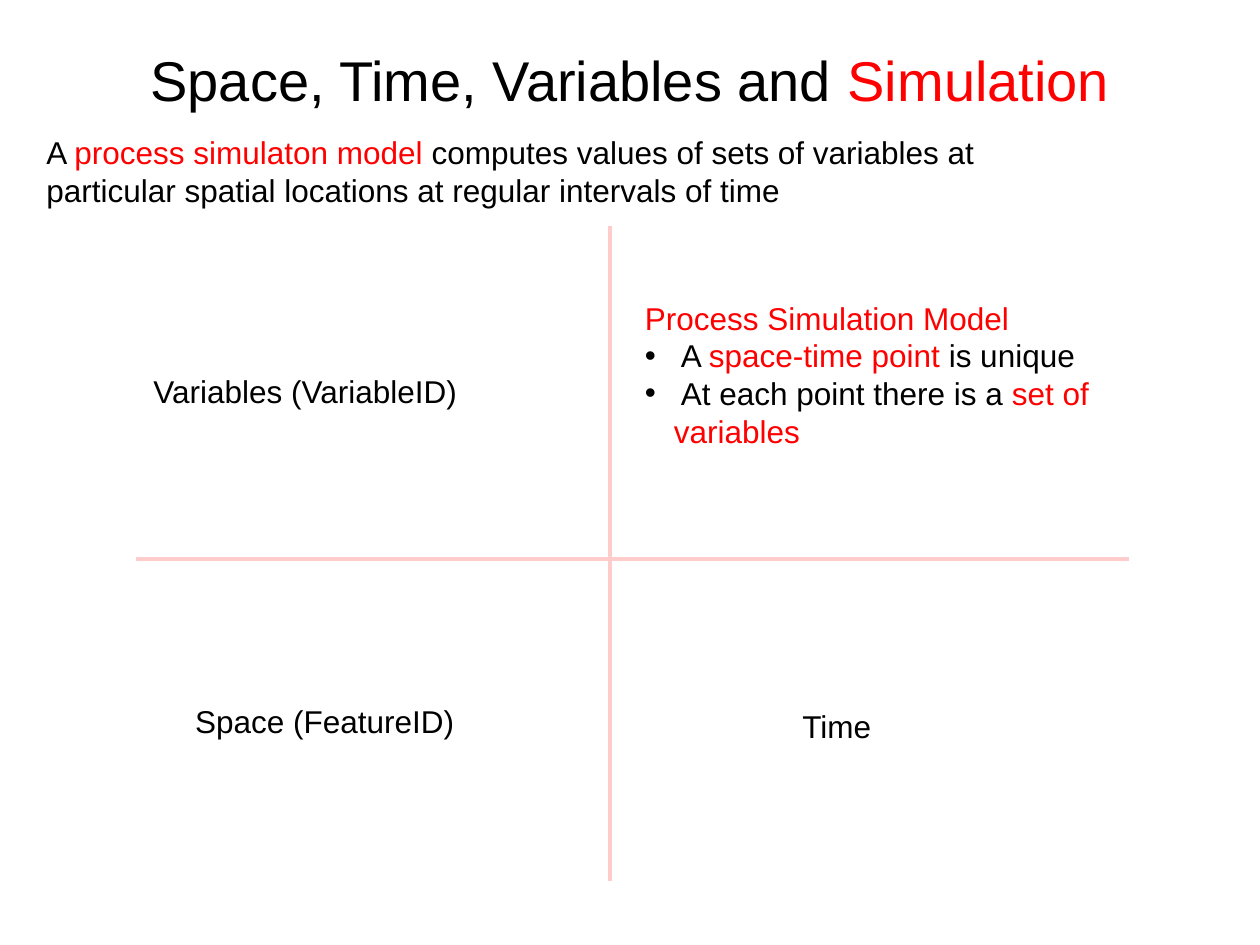
"""Build the Space, Time, Variables and Simulation slide."""
from lxml.etree import SubElement
from pptx import Presentation
from pptx.dml.color import RGBColor
from pptx.enum.shapes import MSO_CONNECTOR as Connector
from pptx.enum.text import MSO_ANCHOR as Anchor, MSO_AUTO_SIZE as AutoSize, PP_ALIGN as Align
from pptx.oxml.ns import qn
from pptx.util import Inches, Pt

BLACK, RED, PINK = "000000", "FF0000", "FFCCCC"

TITLE = [[("Space, Time, Variables and ", BLACK), ("Simulation", RED)]]
DEFINITION = [
    [("A ", BLACK), ("process simulaton model ", RED),
     ("computes values of sets of variables at", BLACK)],
    [("particular spatial locations at regular intervals of time", BLACK)],
]
MODEL = [
    [("Process Simulation Model", RED)],
    [(" A ", BLACK), ("space-time point ", RED), ("is unique", BLACK)],
    [(" At each point there is a ", BLACK), ("set of variables", RED)],
]
QUADRANTS = [
    ("Variables (VariableID)", (1.12, 2.9, 2.63, 0.4)),
    ("Space (FeatureID)", (1.45, 5.52, 2.28, 0.4)),
    ("Time", (6.27, 5.56, 0.75, 0.4)),
]
AXES = [(4.84, 1.79, 4.84, 6.99), (1.08, 4.44, 8.96, 4.44)]


def color(value):
    return RGBColor.from_string(value)


def add_text(slide, place, paragraphs, size=18, wrap=False):
    frame = slide.shapes.add_textbox(*map(Inches, place)).text_frame
    frame.word_wrap = wrap
    frame.auto_size = AutoSize.SHAPE_TO_FIT_TEXT
    for index, runs in enumerate(paragraphs):
        paragraph = frame.add_paragraph() if index else frame.paragraphs[0]
        for words, shade in runs:
            run = paragraph.add_run()
            run.text = words
            run.font.name = "Arial"
            run.font.size = Pt(size)
            run.font.color.rgb = color(shade)
    return frame


def add_bullet(paragraph, indent=0.23):
    properties = paragraph._p.get_or_add_pPr()
    properties.set("marL", str(Inches(indent)))
    properties.set("indent", str(-Inches(indent)))
    SubElement(properties, qn("a:buFont"), typeface="Arial")
    SubElement(properties, qn("a:buChar"), char="•")


def add_axis(slide, ends):
    axis = slide.shapes.add_connector(Connector.STRAIGHT, *map(Inches, ends))
    axis.line.color.rgb = color(PINK)
    axis.line.width = Pt(2.25)
    SubElement(axis._element.spPr, qn("a:effectLst"))


def main():
    deck = Presentation()
    deck.slide_width, deck.slide_height = Inches(10), Inches(7.5)
    slide = deck.slides.add_slide(deck.slide_layouts[6])

    title = add_text(slide, (0.5, 0, 9, 1.25), TITLE, size=32, wrap=True)
    title.auto_size = AutoSize.NONE
    title.vertical_anchor = Anchor.MIDDLE
    title.paragraphs[0].alignment = Align.CENTER

    for ends in AXES:
        add_axis(slide, ends)
    for label, place in QUADRANTS:
        add_text(slide, place, [[(label, BLACK)]])

    model = add_text(slide, (5.02, 2.32, 4.78, 1.01), MODEL, wrap=True)
    for point in model.paragraphs[1:]:
        add_bullet(point)
    add_text(slide, (0.27, 1.01, 7.7, 0.71), DEFINITION)

    deck.save("out.pptx")


if __name__ == "__main__":
    main()
